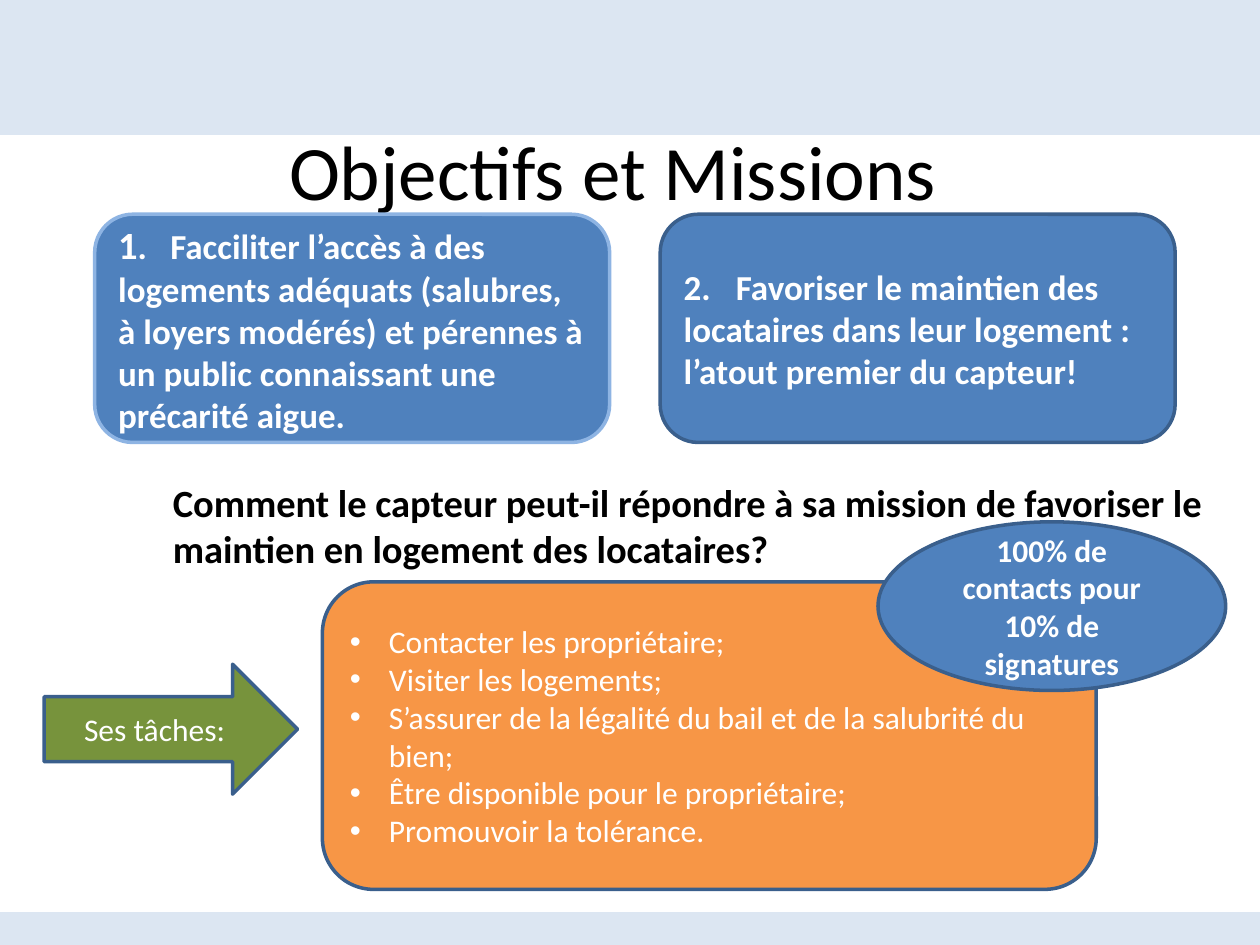
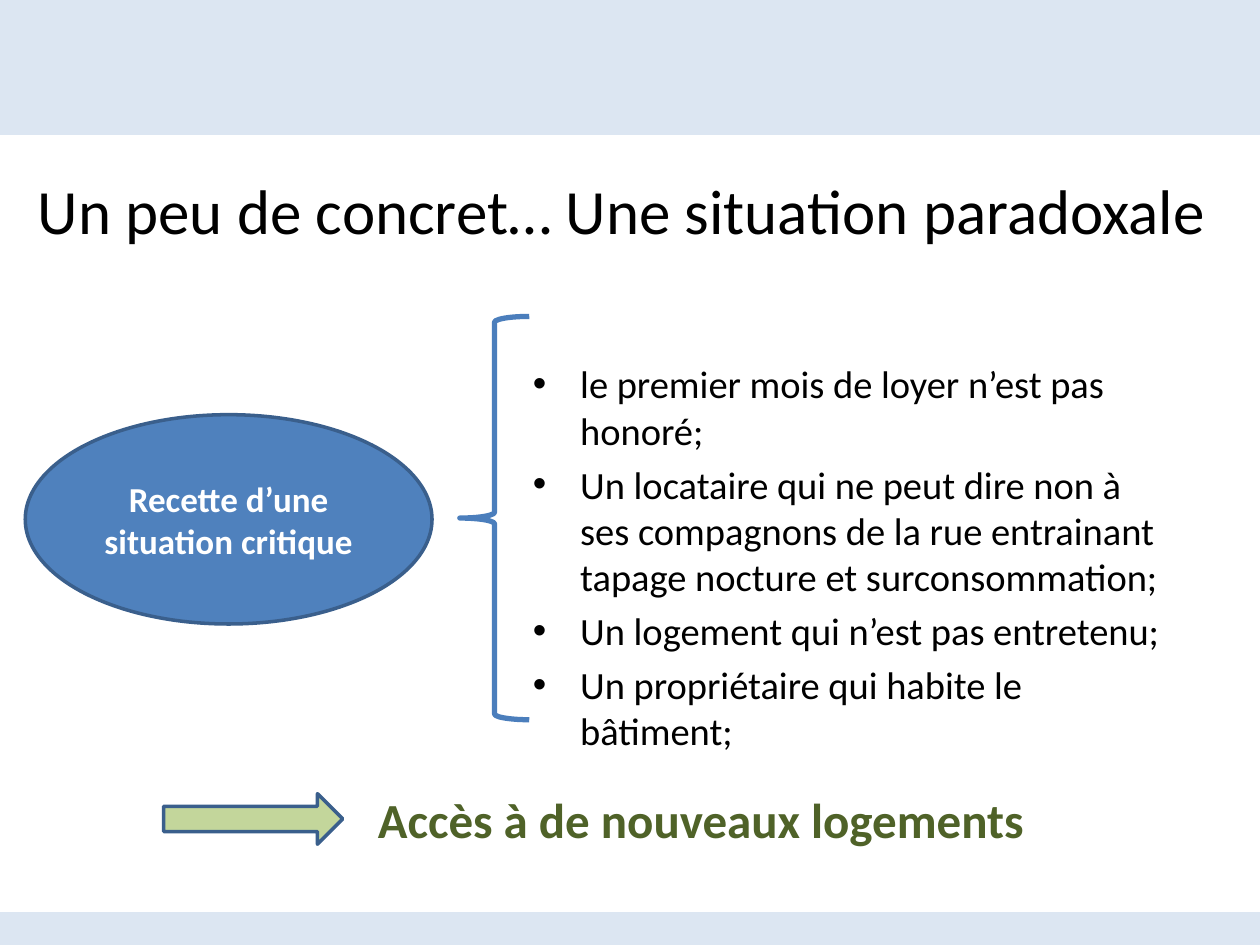
from lxml import etree
from pptx import Presentation
from pptx import util as u
from pptx.dml.color import RGBColor
from pptx.enum import shapes, text
from pptx.oxml import ns

BAND = RGBColor(0xDC, 0xE6, 0xF2)
BLUE = RGBColor(0x4F, 0x81, 0xBD)
NAVY = RGBColor(0x3A, 0x5F, 0x8C)
SKY = RGBColor(0x8E, 0xB4, 0xE3)
BRACE = RGBColor(0x4B, 0x7E, 0xBC)
ORANGE = RGBColor(0xF7, 0x96, 0x46)
GREEN = RGBColor(0x77, 0x93, 0x3C)
LIME = RGBColor(0xC3, 0xD6, 0x9B)
OLIVE = RGBColor(0x4F, 0x62, 0x28)
WHITE = RGBColor(0xFF, 0xFF, 0xFF)
BLACK = RGBColor(0, 0, 0)
KIND = shapes.MSO_SHAPE
LEFT, MID = text.PP_ALIGN.LEFT, text.PP_ALIGN.CENTER


def draw(page, kind, box, fill, edge=None, width=2):
    """Add a preset shape; box is left, top, width, height in cm."""
    shape = page.shapes.add_shape(kind, *map(u.Cm, box))
    shape.shadow.inherit = False
    if fill is None:
        shape.fill.background()
    else:
        shape.fill.solid()
        shape.fill.fore_color.rgb = fill
    if edge is None:
        shape.line.fill.background()
    else:
        shape.line.color.rgb = edge
        shape.line.width = u.Pt(width)
    return shape


def write(shape, lines, size, color, align=LEFT, bold=False,
          anchor=text.MSO_ANCHOR.MIDDLE):
    """Fill a shape with paragraphs; a line is a string or (words, size) runs."""
    frame = shape.text_frame
    look = {"word_wrap": True, "auto_size": text.MSO_AUTO_SIZE.NONE,
            "vertical_anchor": anchor}
    for key, val in look.items():
        setattr(frame, key, val)
    for i, line in enumerate(lines):
        para = frame.paragraphs[0] if i == 0 else frame.add_paragraph()
        para.alignment = align
        if i == 0:
            para.space_before = u.Pt(0)
        for words, pts in [(line, size)] if isinstance(line, str) else line:
            run = para.add_run()
            run.text = words
            style = {"name": "Calibri", "size": u.Pt(pts), "bold": bold}
            for key, val in style.items():
                setattr(run.font, key, val)
            run.font.color.rgb = color
    return frame


deck = Presentation()
deck.slide_width, deck.slide_height = u.Cm(25.4), u.Cm(19.05)
plan = deck.slide_layouts[1]

# Titles: words, box, size, alignment
heads = [
    ("Objectifs et Missions", (1.3, 1.93, 22.86, 3), 44, MID),
    ("Un peu de concret… Une situation paradoxale",
     (0.51, 2.72, 24.41, 3), 36, LEFT),
]
bodies = [(3.23, 8.94, 22.15, 3.02), (10.49, 7.14, 13.41, 7.32)]
pages = []
for (words, box, size, align), area in zip(heads, bodies):
    page = deck.slides.add_slide(plan)
    for shape, spot in zip(page.placeholders, (box, area)):
        for key, val in zip(("left", "top", "width", "height"), spot):
            setattr(shape, key, u.Cm(val))
    write(page.shapes.title, [words], size, BLACK, align)
    pages.append(page)
goals, case = pages
goals.shapes.title.text_frame.margin_right = u.Cm(1)

# Bands shared through the master
tree = deck.slide_master.shapes.element
for top, high in ((0, 2.72), (18.39, 0.66)):
    band = draw(goals, KIND.RECTANGLE, (0, top, 25.4, high), BAND)
    tree.insert(2, band.element)

# Slide 1: question
ask = goals.placeholders[1]
ask.fill.solid()
ask.fill.fore_color.rgb = WHITE
ask.line.color.rgb = WHITE
ask.line.width = u.Pt(2)
frame = write(ask, ["Comment le capteur peut-il répondre à sa mission de "
                    "favoriser le maintien en logement des locataires?"],
              22, BLACK, bold=True)
frame.margin_top = u.Cm(0.4)
props = frame.paragraphs[0]._p.get_or_add_pPr()
props.set("marL", "0")
props.set("indent", "0")
etree.SubElement(props, ns.qn("a:buNone"))

# Slide 1: tasks arrow
tasks = draw(goals, KIND.RIGHT_ARROW, (0.89, 13.39, 5.11, 2.62), GREEN, NAVY)
write(tasks, ["Ses tâches:"], 18, WHITE, MID)

# Slide 1: two goals, numbered with a tab
cards = [
    (1.91, SKY, [("1", 22), (
        ".\tFacciliter l’accès à des logements adéquats (salubres, à loyers "
        "modérés) et pérennes à un public connaissant une précarité aigue.",
        20)]),
    (13.31, NAVY, [(
        "2.\tFavoriser le maintien des locataires dans leur logement : "
        "l’atout premier du capteur!", 20)]),
]
for left, edge, line in cards:
    card = draw(goals, KIND.ROUNDED_RECTANGLE, (left, 4.32, 10.38, 4.6),
                BLUE, edge)
    frame = write(card, [line], 20, WHITE, bold=True)
    props = frame.paragraphs[0]._p.get_or_add_pPr()
    tabs = etree.SubElement(props, ns.qn("a:tabLst"))
    etree.SubElement(tabs, ns.qn("a:tab"), pos=str(u.Cm(1.05)), algn="l")

# Slide 1: task list
panel = draw(goals, KIND.ROUNDED_RECTANGLE, (6.5, 11.73, 15.6, 6.2),
             ORANGE, NAVY)
frame = write(panel, [
    "Contacter les propriétaire;",
    "Visiter les logements;",
    "S’assurer de la légalité du bail et de la salubrité du bien;",
    "Être disponible pour le propriétaire;",
    "Promouvoir la tolérance.",
], 18, WHITE)
for para in frame.paragraphs:
    props = para._p.get_or_add_pPr()
    props.set("marL", str(u.Cm(0.79)))
    props.set("indent", str(-u.Cm(0.79)))
    etree.SubElement(props, ns.qn("a:buFont"), typeface="Arial")
    etree.SubElement(props, ns.qn("a:buChar"), char="•")

# Slide 1: ratio
ratio = draw(goals, KIND.OVAL, (17.7, 10.52, 7.01, 3.4), BLUE, NAVY)
write(ratio, ["100% de contacts pour 10% de signatures"], 18, WHITE, MID, True)

# Slide 2: causes
write(case.placeholders[1], [
    "le premier mois de loyer n’est pas honoré;",
    "Un locataire qui ne peut dire non à ses compagnons de la rue "
    "entrainant tapage nocture et surconsommation;",
    "Un logement qui n’est pas entretenu;",
    "Un propriétaire qui habite le bâtiment;",
], 22, BLACK, anchor=text.MSO_ANCHOR.TOP)

# Slide 2: outcome
note = case.shapes.add_textbox(*map(u.Cm, (7.37, 15.8, 15.6, 1.45)))
write(note, ["Accès à de nouveaux logements"], 28, OLIVE, bold=True,
      anchor=text.MSO_ANCHOR.TOP)
draw(case, KIND.RIGHT_ARROW, (3.3, 16, 3.61, 1.02), LIME, NAVY)

# Slide 2: brace and topic
draw(case, KIND.LEFT_BRACE, (9.27, 6.38, 1.4, 8.13), None, BRACE, 3)
topic = draw(case, KIND.OVAL, (0.51, 8.36, 8.2, 4.22), BLUE, NAVY)
write(topic, ["Recette d’une situation critique"], 20, WHITE, MID, True)

deck.save("out.pptx")
